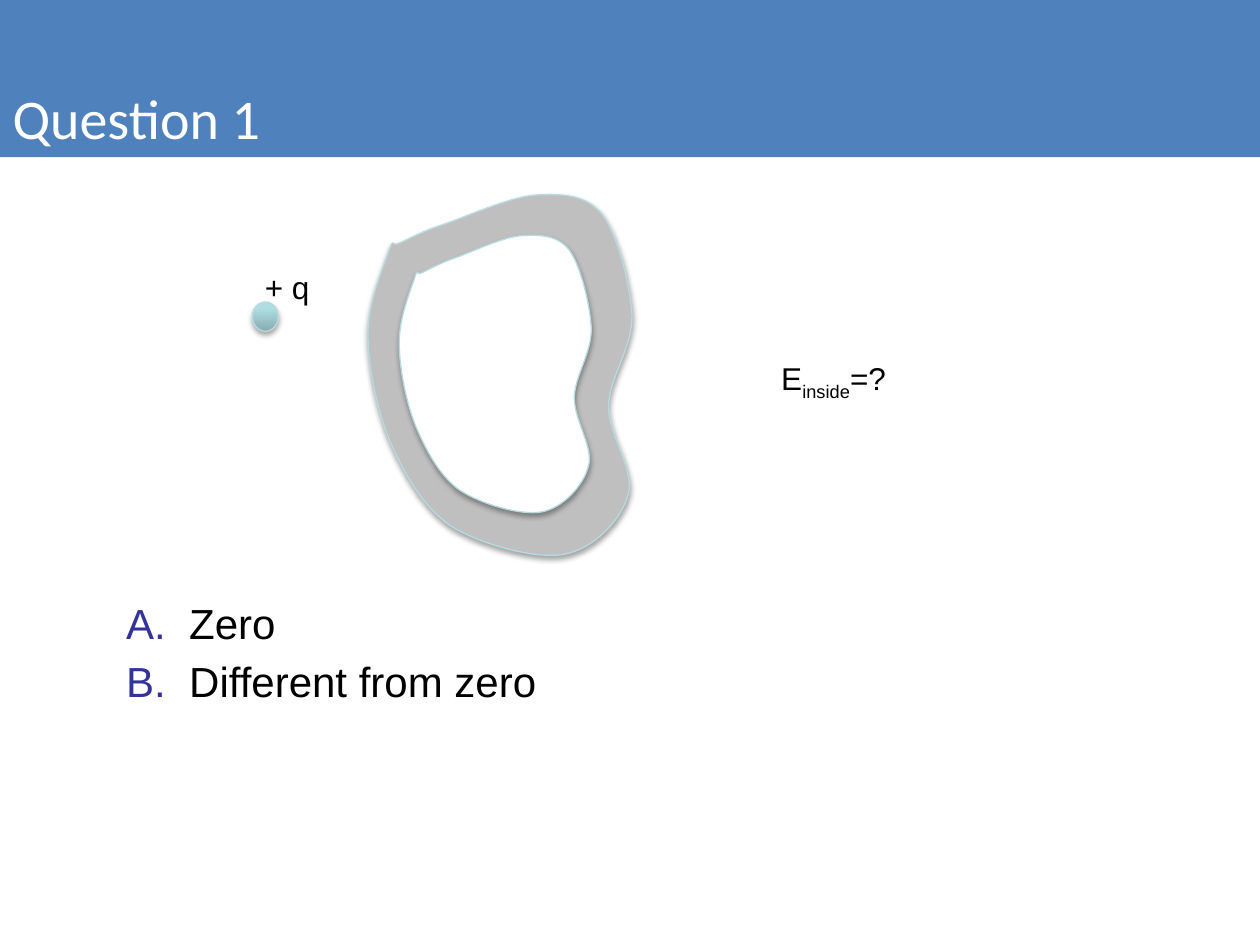
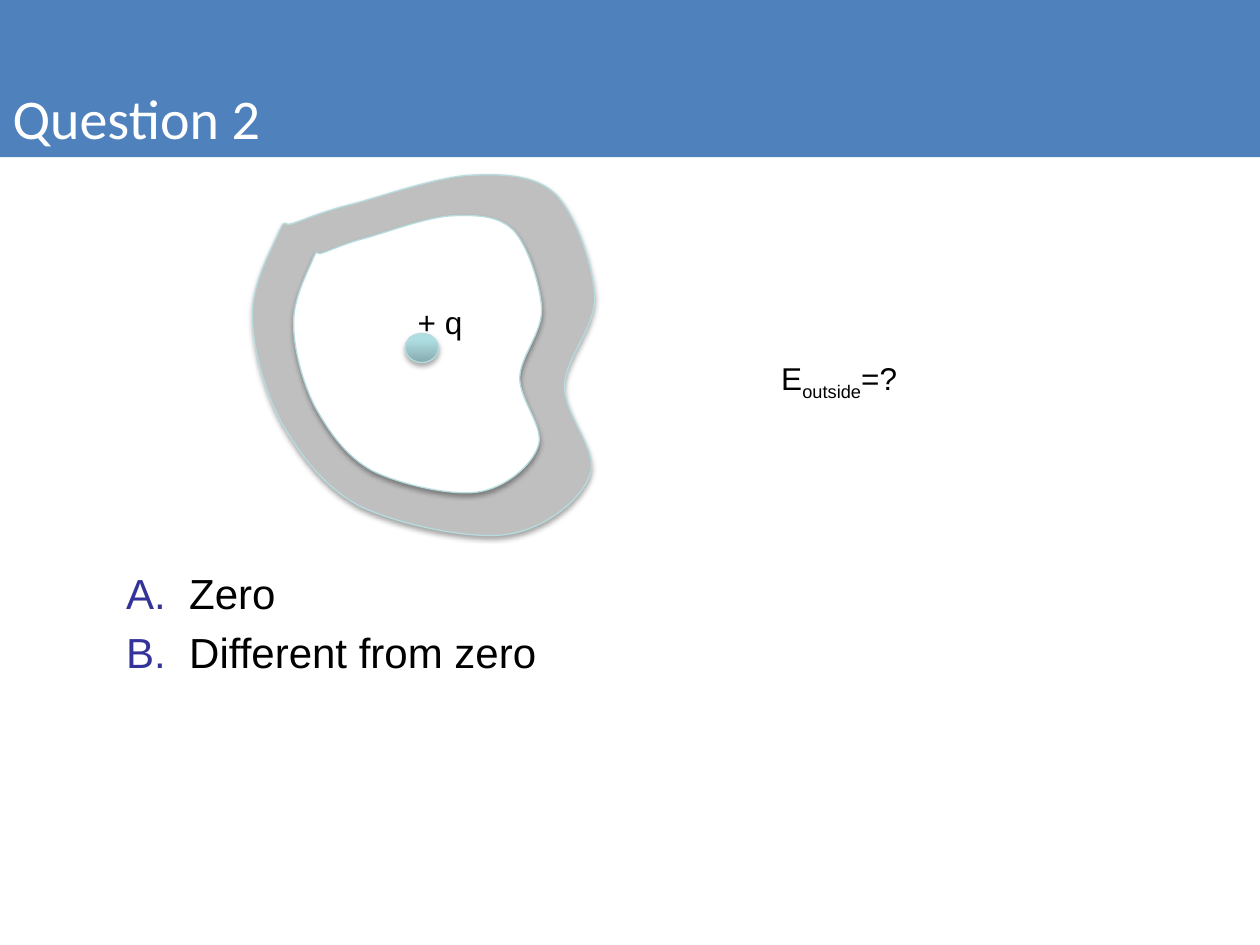
"""Build two quiz slides about a charge and a hollow conductor."""
from dataclasses import dataclass

from lxml import etree
from pptx import Presentation
from pptx.dml.color import RGBColor
from pptx.enum.shapes import MSO_SHAPE
from pptx.enum.text import MSO_ANCHOR, MSO_AUTO_SIZE, PP_ALIGN
from pptx.oxml.ns import qn
from pptx.util import Cm, Pt

ELLIPSE = MSO_SHAPE.OVAL
BOTTOM, TOP = MSO_ANCHOR.BOTTOM, MSO_ANCHOR.TOP
LEFT = PP_ALIGN.LEFT
NO_FIT, GROW = MSO_AUTO_SIZE.NONE, MSO_AUTO_SIZE.SHAPE_TO_FIT_TEXT
TITLE_AND_CONTENT = 1

OUTLINE_SIZE = (271, 286)
OUTLINE_START = (79, 23)
OUTLINE_CURVES = [
    ((102, 17), (147, 1), (174, 0)),
    ((201, -1), (224, 0), (240, 15)),
    ((256, 31), (269, 70), (271, 95)),
    ((272, 121), (248, 144), (247, 167)),
    ((247, 191), (275, 219), (267, 238)),
    ((260, 258), (231, 281), (201, 285)),
    ((171, 289), (116, 277), (86, 263)),
    ((57, 248), (39, 223), (24, 198)),
    ((10, 173), (0, 137), (0, 112)),
    ((-1, 86), (16, 57), (21, 45)),
    ((27, 32), (23, 42), (33, 38)),
    ((42, 35), (55, 29), (79, 23)),
]


@dataclass(frozen=True)
class Theme:
    band: str = "4F81BD"
    title: str = "FFFFFF"
    text: str = "000000"
    number: str = "333399"
    metal: str = "BFBFBF"
    cavity: str = "FFFFFF"
    edge: str = "B6DCDF"
    charge_low: str = "87ABAE"
    charge_high: str = "AFDEE2"
    shadow: str = "000000"
    title_font: str = "Calibri"
    text_font: str = "Arial"
    title_size: float = 32
    list_size: float = 24
    label_size: float = 18
    list_gap: float = 4.8
    edge_width: float = 0.75


def rgb(value):
    return RGBColor.from_string(value)


def place(sp, box):
    sp.left, sp.top, sp.width, sp.height = (Cm(v) for v in box)


class Deck:
    def __init__(self, prs, theme):
        self.prs, self.theme = prs, theme
        self.slide = None

    def new_slide(self):
        layout = self.prs.slide_layouts[TITLE_AND_CONTENT]
        self.slide = self.prs.slides.add_slide(layout)

    def run(self, p, text, font, size, color, baseline=0):
        r = p.add_run()
        r.text = text
        r.font.name, r.font.size = font, Pt(size)
        r.font.color.rgb = rgb(color)
        if baseline:
            r._r.get_or_add_rPr().set("baseline", str(baseline * 1000))

    def title(self, text):
        th, sp = self.theme, self.slide.shapes.title
        place(sp, (0, 0, 25.4, 3.17))
        sp.fill.solid()
        sp.fill.fore_color.rgb = rgb(th.band)
        tf = sp.text_frame
        tf.auto_size, tf.vertical_anchor = NO_FIT, BOTTOM
        p = tf.paragraphs[0]
        p.alignment = LEFT
        self.run(p, text, th.title_font, th.title_size, th.title)

    def answers(self, items, top):
        th, sp = self.theme, self.slide.placeholders[1]
        place(sp, (2.29, top, 21.59, 19.05 - top))
        tf = sp.text_frame
        tf.auto_size, tf.vertical_anchor = NO_FIT, TOP
        for i, item in enumerate(items):
            p = tf.add_paragraph() if i else tf.paragraphs[0]
            pPr = p._p.get_or_add_pPr()
            pPr.set("marL", str(Cm(1.27)))
            pPr.set("indent", str(-Cm(1.27)))
            color = etree.SubElement(pPr, qn("a:buClr"))
            etree.SubElement(color, qn("a:srgbClr"), val=th.number)
            etree.SubElement(pPr, qn("a:buFont"), typeface=th.text_font)
            etree.SubElement(pPr, qn("a:buAutoNum"), type="alphaUcPeriod")
            p.space_before = Pt(th.list_gap if i else 0)
            self.run(p, item, th.text_font, th.list_size, th.text)

    def label(self, shapes, parts, box):
        th = self.theme
        sp = shapes.add_textbox(*(Cm(v) for v in box))
        tf = sp.text_frame
        tf.word_wrap, tf.auto_size = False, GROW
        for text, baseline in parts:
            self.run(tf.paragraphs[0], text, th.text_font, th.label_size,
                     th.text, baseline)

    def edge_and_shadow(self, sp):
        th = self.theme
        sp.line.color.rgb = rgb(th.edge)
        sp.line.width = Pt(th.edge_width)
        sp.shadow.inherit = False
        effects = sp._element.spPr.find(qn("a:effectLst"))
        shadow = etree.SubElement(
            effects, qn("a:outerShdw"), blurRad=str(Pt(3.1)),
            dist=str(Pt(1.8)), dir="5400000", rotWithShape="0")
        color = etree.SubElement(shadow, qn("a:srgbClr"), val=th.shadow)
        etree.SubElement(color, qn("a:alpha"), val="35000")

    def outline(self, shapes, box, color):
        left, top, width, height = box

        def local(point):
            return (Cm(width * point[0] / OUTLINE_SIZE[0]),
                    Cm(height * point[1] / OUTLINE_SIZE[1]))

        builder = shapes.build_freeform(*local(OUTLINE_START))
        builder.add_line_segments([local(c[-1]) for c in OUTLINE_CURVES])
        sp = builder.convert_to_shape(Cm(left), Cm(top))
        lines = list(sp._element.iter(qn("a:lnTo")))
        for line, curve in zip(lines, OUTLINE_CURVES):
            bezier = etree.Element(qn("a:cubicBezTo"))
            for x, y in map(local, curve):
                etree.SubElement(bezier, qn("a:pt"), x=str(x), y=str(y))
            line.getparent().replace(line, bezier)
        sp.fill.solid()
        sp.fill.fore_color.rgb = rgb(color)
        self.edge_and_shadow(sp)

    def charge(self, shapes, box):
        th = self.theme
        sp = shapes.add_shape(ELLIPSE, *(Cm(v) for v in box))
        sp.fill.gradient()
        sp.fill.gradient_angle = 90
        stops = zip(sp.fill.gradient_stops, (0, 0.8),
                    (th.charge_low, th.charge_high))
        for stop, position, color in stops:
            stop.position = position
            stop.color.rgb = rgb(color)
        self.edge_and_shadow(sp)

    def conductor(self, metal, cavity, charge, charge_label):
        shapes = self.slide.shapes.add_group_shape().shapes
        self.outline(shapes, metal, self.theme.metal)
        self.outline(shapes, cavity, self.theme.cavity)
        self.charge(shapes, charge)
        self.label(shapes, [("+ q", 0)], charge_label)

    def field(self, region, width):
        parts = [("E", 0), (region, -25), ("=?", 0)]
        self.label(self.slide.shapes, parts, (15.5, 7.11, width, 1.02))


QUESTIONS = [
    dict(region="inside", field_width=2.77, answers_top=11.91,
         metal=(7.42, 3.93, 5.32, 7.27), cavity=(8.05, 4.75, 3.87, 5.59),
         charge=(5.09, 6.09, 0.52, 0.59), charge_label=(5.09, 5.28, 1.42, 1.02)),
    dict(region="outside", field_width=3.05, answers_top=11.31,
         metal=(5.09, 3.53, 6.9, 7.27), cavity=(5.92, 4.35, 5, 5.59),
         charge=(8.17, 6.72, 0.67, 0.59), charge_label=(8.17, 5.98, 1.42, 1.02)),
]


def main():
    prs = Presentation()
    prs.slide_width, prs.slide_height = Cm(25.4), Cm(19.05)
    deck = Deck(prs, Theme())
    for number, q in enumerate(QUESTIONS, 1):
        deck.new_slide()
        deck.title(f"Question {number}")
        deck.field(q["region"], q["field_width"])
        deck.answers(["Zero", "Different from zero"], q["answers_top"])
        deck.conductor(q["metal"], q["cavity"], q["charge"], q["charge_label"])
    prs.save("out.pptx")


if __name__ == "__main__":
    main()
